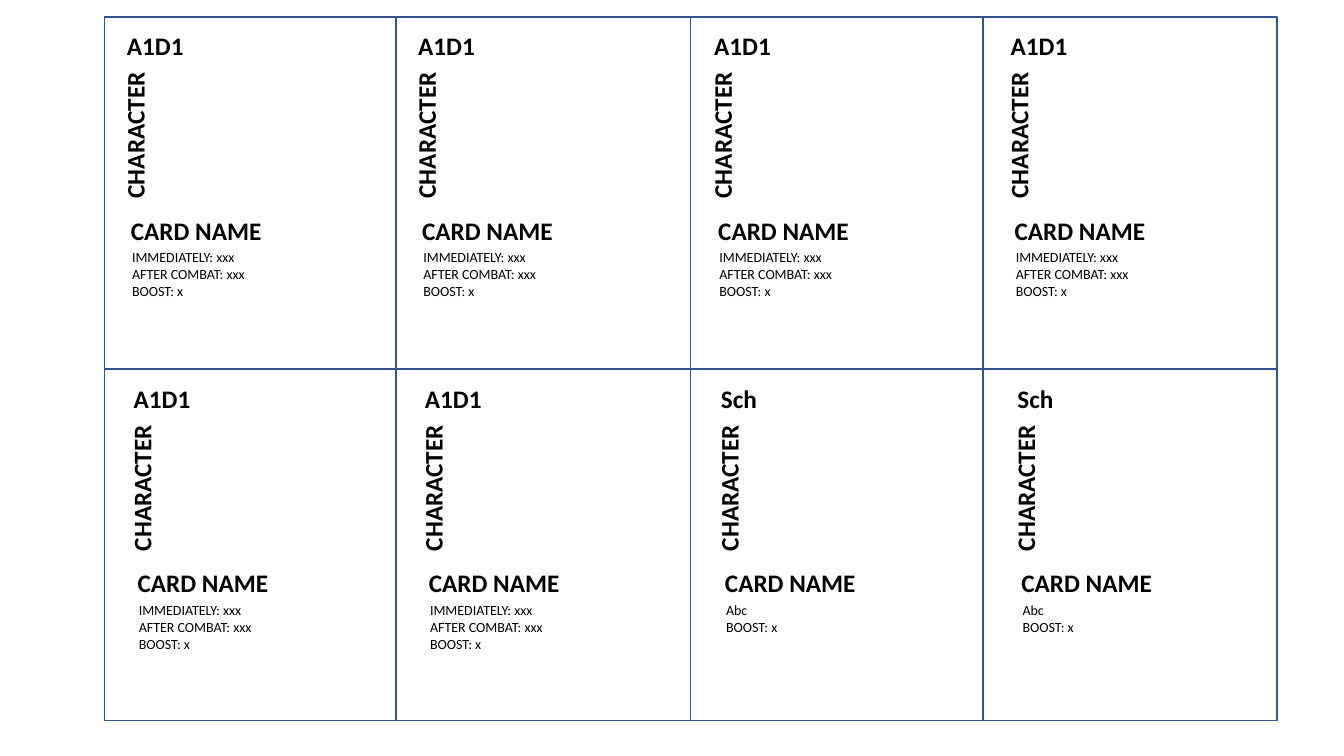
import copy
import dataclasses

import pptx
import pptx.dml.color
import pptx.enum.shapes
import pptx.enum.text
import pptx.oxml.ns
import pptx.util

Cm = pptx.util.Cm
Pt = pptx.util.Pt
Align = pptx.enum.text.PP_ALIGN


@dataclasses.dataclass(frozen=True)
class Theme:
    font: str = "Calibri"
    ink: str = "000000"
    border: str = "325491"
    border_width: float = 1
    heading: float = 18
    body: float = 10


THEME = Theme()

COLUMN_EDGES = (2.64, 9.98, 17.4, 24.77, 32.18)
ROW_EDGES = (0.43, 9.3, 18.16)
FRAMES = ((0, 0, 4, 2), (0, 0, 2, 1), (1, 0, 3, 2), (2, 1, 4, 2))

CARD_LEFTS = (2.95, 10.29, 17.75, 25.22)
CARD_TOP = 0.64
ROW_PITCH = 8.89
ROW_INDENT = 0.17

FIGHT = ("A1D1", "IMMEDIATELY: xxx\nAFTER COMBAT: xxx\nBOOST: x", 1.56)
SCHEME = ("Sch", "Abc\nBOOST: x", 1.13)
CARD_ROWS = ((FIGHT,) * 4, (FIGHT, FIGHT, SCHEME, SCHEME))


def add_text(page, text, left, top, width, height, size=THEME.heading,
             bold=True, align=Align.LEFT, rotation=0):
    box = page.shapes.add_textbox(Cm(left), Cm(top), Cm(width), Cm(height))
    box.rotation = rotation
    frame = box.text_frame
    frame.word_wrap = True
    frame.auto_size = pptx.enum.text.MSO_AUTO_SIZE.SHAPE_TO_FIT_TEXT
    para = frame.paragraphs[0]
    para.text = text
    para.alignment = align
    for span in para.runs:
        span.font.name = THEME.font
        span.font.size = Pt(size)
        span.font.bold = bold
        span.font.color.rgb = pptx.dml.color.RGBColor.from_string(THEME.ink)
    for line_break in para._p.findall(pptx.oxml.ns.qn("a:br")):
        line_break.append(copy.deepcopy(para.runs[0]._r.rPr))


def add_grid(page, columns, rows):
    for first_column, first_row, last_column, last_row in FRAMES:
        left, top = columns[first_column], rows[first_row]
        outline = page.shapes.add_shape(
            pptx.enum.shapes.MSO_SHAPE.RECTANGLE, Cm(left), Cm(top),
            Cm(columns[last_column] - left), Cm(rows[last_row] - top))
        outline.shadow.inherit = False
        outline.fill.background()
        outline.line.width = Pt(THEME.border_width)
        outline.line.color.rgb = pptx.dml.color.RGBColor.from_string(THEME.border)


def add_card(page, left, top, stats, effects, effects_height):
    add_text(page, stats, left, top, 2.13, 1.02)
    add_text(page, effects, left + 0.13, top + 5.51, 6.5, effects_height,
             size=THEME.body, bold=False)
    add_text(page, "CHARACTER", left - 1.55, top + 2.26, 3.99, 1.02,
             align=Align.CENTER, rotation=270)
    add_text(page, "CARD NAME", left + 0.1, top + 4.65, 5.54, 1.02)


def main():
    deck = pptx.Presentation()
    deck.slide_width, deck.slide_height = Cm(33.87), Cm(19.05)
    page = deck.slides.add_slide(deck.slide_layouts.get_by_name("Blank"))
    add_grid(page, COLUMN_EDGES, ROW_EDGES)
    for row, cards in enumerate(CARD_ROWS):
        for left, card in zip(CARD_LEFTS, cards):
            add_card(page, left + row * ROW_INDENT, CARD_TOP + row * ROW_PITCH, *card)
    deck.save("out.pptx")


if __name__ == "__main__":
    main()
